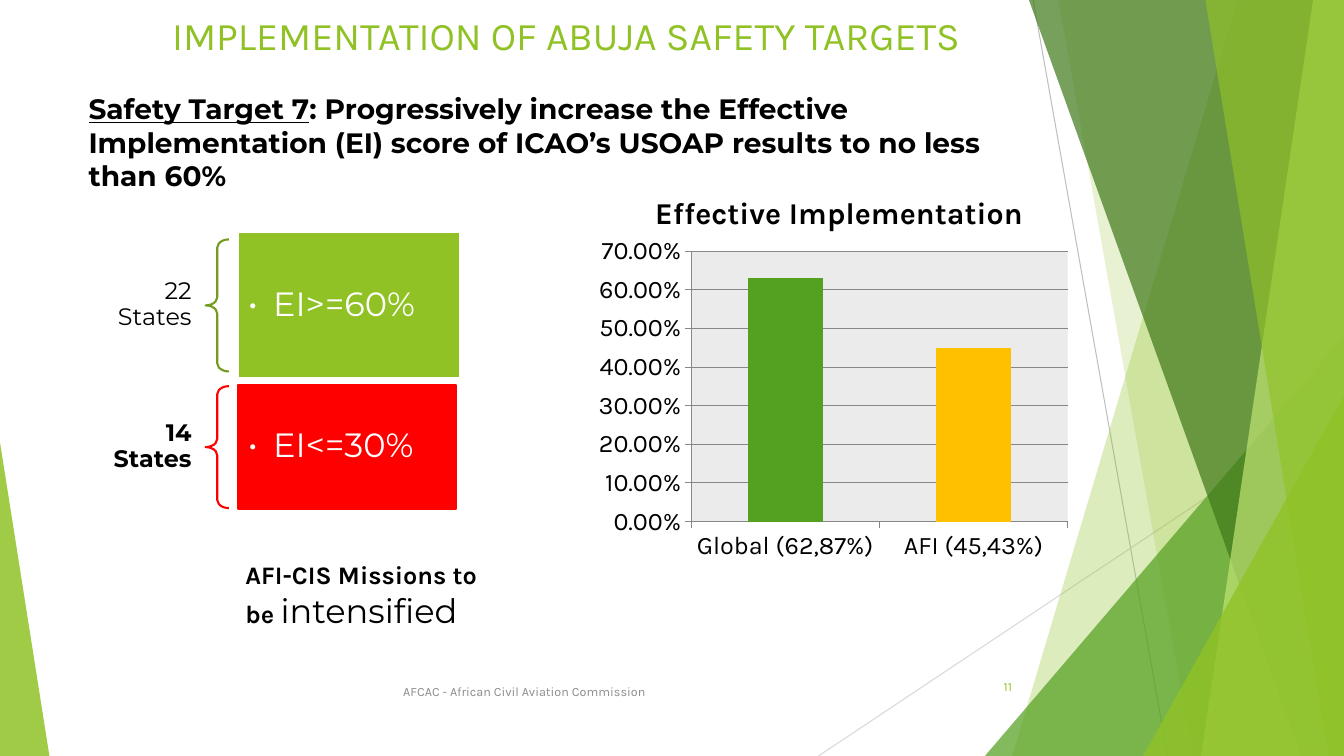
from dataclasses import dataclass

from lxml.etree import SubElement
from pptx import Presentation
from pptx.chart.data import CategoryChartData
from pptx.dml.color import RGBColor
from pptx.enum.chart import XL_CHART_TYPE as ChartType, XL_TICK_MARK as TickMark
from pptx.enum.shapes import MSO_CONNECTOR as Connector, MSO_SHAPE as Preset
from pptx.enum.text import MSO_ANCHOR as Anchor, MSO_AUTO_SIZE as AutoSize, PP_ALIGN as Align
from pptx.oxml import parse_xml
from pptx.oxml.ns import nsdecls, qn
from pptx.util import Pt

COLORS = {
    "lime": "90C226", "green": "54A021", "forest": "3F7819", "pale": "C0E474",
    "olive": "739B1E", "red": "FF0000", "amber": "FFC000", "black": "000000",
    "white": "FFFFFF", "footer": "8C8C8C", "axis": "878787", "plot": "EBEBEB",
    "dark line": "BFBFBF", "light line": "D9D9D9",
}
WIDTH, HEIGHT = 960, 540
KARLA, MONTSERRAT = "Karla", "Montserrat"


@dataclass
class Run:
    text: str
    size: float
    font: str = KARLA
    color: str = "black"
    bold: bool = False
    underline: bool = False


@dataclass
class Facet:
    """Band that reaches the right edge, from its left corners there."""
    top_x: float
    bottom_x: float
    color: str
    alpha: int


@dataclass
class Wedge:
    """Right triangle on the bottom edge; apex 0 is left, 1 is right."""
    left: float
    top: float
    width: float
    apex: int
    color: str
    alpha: int


@dataclass
class ScoreBand:
    states: str
    score: str
    bold: bool
    label_top: float
    brace: tuple[float, float]  # top, height
    box: tuple[float, float, float]  # top, width, height
    fill: str
    brace_color: str
    border: str


DECORATION = [
    Facet(884, 723, "lime", 30),
    Facet(756, 852, "lime", 20),
    Wedge(703.5, 240, 256.5, 1, "green", 72),
    Facet(735, 929.5, "forest", 70),
    Facet(938, 858, "pale", 70),
    Facet(861, 949, "lime", 65),
    Wedge(816.5, 283, 143.5, 1, "lime", 80),
    Wedge(0, 316, 35.3, 0, "lime", 85),
]
BANDS = [
    ScoreBand("22 States", "EI>=60%", False, 192.6, (171, 94.3),
              (166, 158.4, 104.4), "lime", "olive", "white"),
    ScoreBand("14 States", "EI<=30%", True, 294.1, (275.8, 87.1),
              (275, 155.9, 88.6), "red", "red", "red"),
]


def rgb(name: str) -> RGBColor:
    return RGBColor.from_string(COLORS[name])


def style_shape(shape, fill=None, line=None, line_width=1.5, alpha=100) -> None:
    shape.shadow.inherit = False
    if fill:
        shape.fill.solid()
        shape.fill.fore_color.rgb = rgb(fill)
        if alpha < 100:
            color = shape._element.spPr.find(qn("a:solidFill"))[0]
            SubElement(color, qn("a:alpha"), val=str(alpha * 1000))
    else:
        shape.fill.background()
    if line:
        shape.line.color.rgb = rgb(line)
        shape.line.width = Pt(line_width)
    else:
        shape.line.fill.background()


def write_text(shape, *paragraphs: list[Run], align=Align.LEFT, anchor=Anchor.TOP,
               margins=(7.2, 3.6), spacing=None, bullet=False) -> None:
    frame = shape.text_frame
    frame.word_wrap = True
    frame.auto_size = AutoSize.NONE
    frame.vertical_anchor = anchor
    frame.margin_left = frame.margin_right = Pt(margins[0])
    frame.margin_top = frame.margin_bottom = Pt(margins[1])
    for index, runs in enumerate(paragraphs):
        paragraph = frame.add_paragraph() if index else frame.paragraphs[0]
        paragraph.alignment = align
        if bullet:
            properties = paragraph._p.get_or_add_pPr()
            properties.set("marL", str(Pt(18)))
            properties.set("indent", str(Pt(-18)))
            SubElement(properties, qn("a:buFont"), typeface=runs[0].font)
            SubElement(properties, qn("a:buChar"), char="•")
        if spacing:
            paragraph.line_spacing = spacing
        for item in runs:
            run = paragraph.add_run()
            run.text = item.text
            format_font(run.font, item)


def format_font(font, style: Run) -> None:
    font.size, font.name = Pt(style.size), style.font
    font.bold, font.underline = style.bold, style.underline
    font.color.rgb = rgb(style.color)


def add_text(slide, left, top, width, height, *paragraphs: list[Run], **options) -> None:
    box = slide.shapes.add_textbox(Pt(left), Pt(top), Pt(width), Pt(height))
    write_text(box, *paragraphs, **options)


def add_line(slide, start: tuple, end: tuple, color: str) -> None:
    line = slide.shapes.add_connector(Connector.STRAIGHT, *map(Pt, start + end))
    line.line.color.rgb = rgb(color)
    line.line.width = Pt(0.75)
    SubElement(line._element.spPr, qn("a:effectLst"))


def add_preset(slide, preset, left, top, width, height, adjust=(), **style):
    shape = slide.shapes.add_shape(preset, Pt(left), Pt(top), Pt(width), Pt(height))
    for index, value in enumerate(adjust):
        shape.adjustments[index] = value
    style_shape(shape, **style)
    return shape


def add_facet(slide, facet: Facet) -> None:
    builder = slide.shapes.build_freeform(Pt(facet.top_x), 0)
    corners = [(WIDTH, 0), (WIDTH, HEIGHT), (facet.bottom_x, HEIGHT)]
    builder.add_line_segments([(Pt(x), Pt(y)) for x, y in corners], close=True)
    style_shape(builder.convert_to_shape(), fill=facet.color, alpha=facet.alpha)


def add_decoration(slide) -> None:
    add_line(slide, (738, 0), (834, HEIGHT), "dark line")
    add_line(slide, (WIDTH, 290), (584.6, HEIGHT), "light line")
    for part in DECORATION:
        if isinstance(part, Facet):
            add_facet(slide, part)
        else:
            add_preset(slide, Preset.ISOSCELES_TRIANGLE, part.left, part.top, part.width,
                       HEIGHT - part.top, (part.apex,), fill=part.color, alpha=part.alpha)


def add_band(slide, band: ScoreBand) -> None:
    add_text(slide, 62.8, band.label_top, 83.5, 50.4,
             [Run(band.states, 17, MONTSERRAT, bold=band.bold)],
             align=Align.RIGHT, anchor=Anchor.MIDDLE, margins=(9.4, 3.6), spacing=0.9)
    brace_top, brace_height = band.brace
    add_preset(slide, Preset.LEFT_BRACE, 146.9, brace_top, 16.6, brace_height,
               (0.35, 0.5), line=band.brace_color)
    top, width, height = band.box
    box = add_preset(slide, Preset.RECTANGLE, 170, top, width, height,
                     fill=band.fill, line=band.border)
    write_text(box, [Run(band.score, 24, MONTSERRAT, "white")], anchor=Anchor.MIDDLE,
               margins=(7.2, 7.2), spacing=0.9, bullet=True)


def place_in_chart(element, position: int, **places) -> None:
    for old in element.findall(qn("c:layout")):
        element.remove(old)
    values = "".join(f'<c:{key} val="{value}"/>' for key, value in places.items())
    element.insert(position, parse_xml(
        f'<c:layout {nsdecls("c")}><c:manualLayout>{values}</c:manualLayout></c:layout>'))


def add_score_chart(slide) -> None:
    data = CategoryChartData(number_format="0.00%")
    data.categories = ["Global (62,87%)", "AFI (45,43%)"]
    data.add_series("Series 1", [0.63, 0.45])
    chart = slide.shapes.add_chart(ChartType.COLUMN_CLUSTERED, Pt(421.2), Pt(121),
                                   Pt(348.5), Pt(285), data).chart
    format_font(chart.font, Run("", 18))
    chart.has_legend = False
    chart.has_title = True
    title = chart.chart_title.text_frame.paragraphs[0].add_run()
    title.text = "Effective Implementation"
    format_font(title.font, Run("", 21.6, bold=True))
    place_in_chart(chart.chart_title._element, 1, xMode="edge", yMode="edge",
                   x=0.123, y=0.045)

    # Axes
    values = chart.value_axis
    values.minimum_scale, values.maximum_scale, values.major_unit = 0, 0.7, 0.1
    values.tick_labels.number_format = "0.00%"
    values.tick_labels.number_format_is_linked = False
    for axis in (values, chart.category_axis):
        axis.major_tick_mark = TickMark.OUTSIDE
    for ruled in (values, chart.category_axis, values.major_gridlines):
        ruled.format.line.color.rgb = rgb("axis")
        ruled.format.line.width = Pt(0.75)

    # Columns
    plot = chart.plots[0]
    plot.gap_width = 150
    plot.vary_by_categories = False
    series = plot.series[0]
    for target, color in ((series, "amber"), (series.points[0], "green")):
        target.format.fill.solid()
        target.format.fill.fore_color.rgb = rgb(color)

    # Plot area place and fill
    area = chart._chartSpace.chart.plotArea
    place_in_chart(area, 0, layoutTarget="inner", xMode="edge", yMode="edge",
                   x=0.208, y=0.205, w=0.772, h=0.678)
    area.append(parse_xml(
        f'<c:spPr {nsdecls("c", "a")}><a:solidFill><a:srgbClr val="{COLORS["plot"]}"/>'
        '</a:solidFill></c:spPr>'))


def main() -> None:
    presentation = Presentation()
    presentation.slide_width, presentation.slide_height = Pt(WIDTH), Pt(HEIGHT)
    slide = presentation.slides.add_slide(presentation.slide_layouts[5])
    add_decoration(slide)

    # Title and target
    title = slide.shapes.title
    title.left, title.top, title.width, title.height = map(Pt, (78.5, 4.3, 651.6, 51.8))
    write_text(title, [Run("IMPLEMENTATION OF ABUJA SAFETY TARGETS", 28, color="lime")],
               align=Align.CENTER)
    add_text(slide, 56.2, 61.9, 688.3, 80,
             [Run("Safety Target 7", 20, MONTSERRAT, bold=True, underline=True),
              Run(": Progressively increase the Effective Implementation (EI) score of "
                  "ICAO’s USOAP results to no less than 60%", 20, MONTSERRAT, bold=True)])

    # Score bands, chart and conclusion
    for band in BANDS:
        add_band(slide, band)
    add_score_chart(slide)
    add_text(slide, 168.2, 396, 204.5, 58.3,
             [Run("AFI-CIS Missions to", 18, bold=True)],
             [Run("be ", 18, bold=True), Run("intensified", 24, MONTSERRAT)])

    # Footer
    add_text(slide, 72.5, 479.5, 604, 28.8,
             [Run("AFCAC - African Civil Aviation Commission", 9, color="footer")],
             align=Align.CENTER, anchor=Anchor.MIDDLE)
    add_text(slide, 676, 476, 54, 28.8, [Run("11", 9, color="lime")],
             align=Align.RIGHT, anchor=Anchor.MIDDLE)
    presentation.save("out.pptx")


if __name__ == "__main__":
    main()
